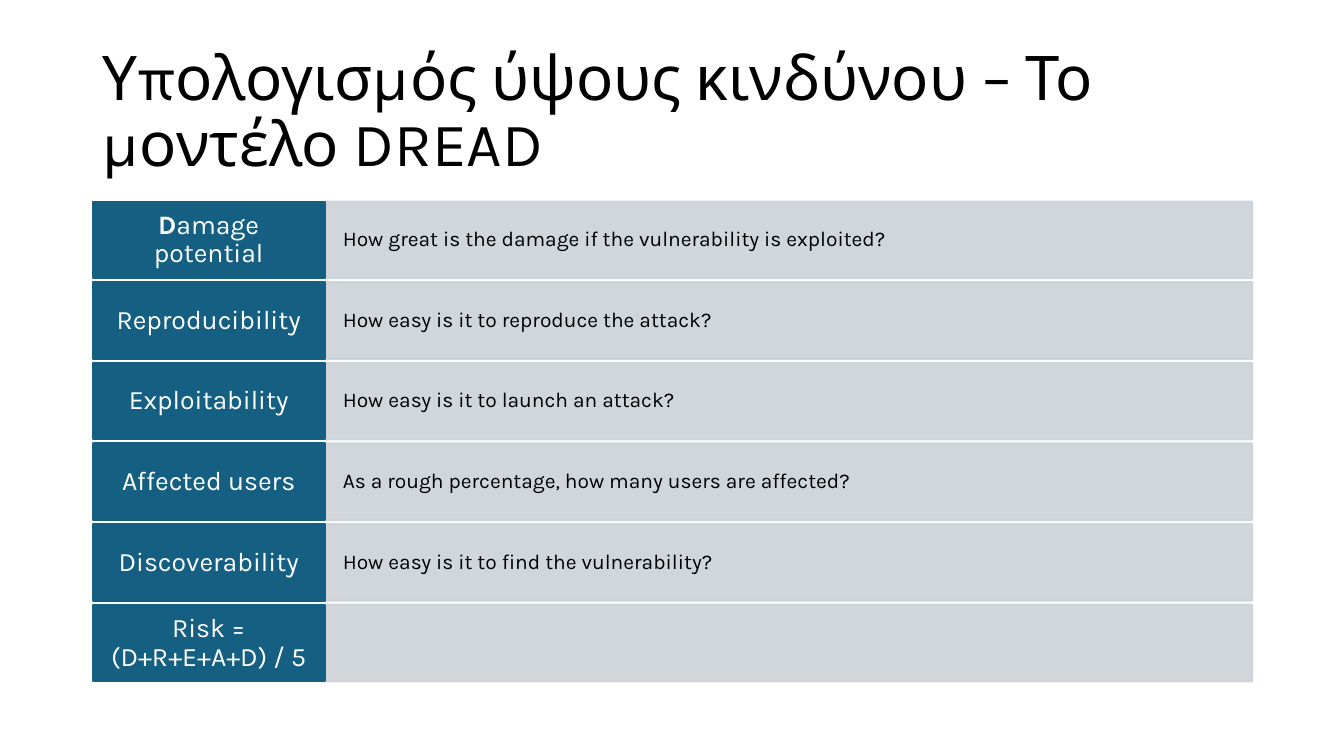
from pptx import Presentation
from pptx.dml.color import RGBColor
from pptx.enum.shapes import MSO_SHAPE as Shape
from pptx.enum.text import MSO_ANCHOR as Anchor, PP_ALIGN as Align
from pptx.oxml.ns import qn
from pptx.util import Emu, Pt
from lxml.etree import SubElement

BLACK = RGBColor(0x00, 0x00, 0x00)
WHITE = RGBColor(0xFF, 0xFF, 0xFF)
TEAL = RGBColor(0x15, 0x60, 0x82)
GREY = RGBColor(0xCC, 0xD2, 0xD8)

# Each criterion: bold initial, rest of the label, question
CRITERIA = [
    ("D", "amage potential", "How great is the damage if the vulnerability is exploited?"),
    ("", "Reproducibility", "How easy is it to reproduce the attack?"),
    ("", "Exploitability", "How easy is it to launch an attack?"),
    ("", "Affected users", "As a rough percentage, how many users are affected?"),
    ("", "Discoverability", "How easy is it to find the vulnerability?"),
    ("", "Risk = (D+R+E+A+D) / 5", ""),
]
LEFT, TOP = 92, 200
LABEL_WIDTH, QUESTION_WIDTH = 230, 920
ROW_HEIGHT, ROW_PITCH = 76, 80


def px(length):
    """One px is a hundredth of an inch."""
    return Emu(length * 9144)


class SlideBuilder:
    font = "Karla"
    line_spacing = 0.9

    def __init__(self, slide):
        self.slide = slide

    def add_text(self, frame, text, size, color, align=Align.LEFT, margins=(10, 5), bold_start=""):
        frame.word_wrap = True
        frame.vertical_anchor = Anchor.MIDDLE
        frame.margin_left = frame.margin_right = px(margins[0])
        frame.margin_top = frame.margin_bottom = px(margins[1])
        paragraph = frame.paragraphs[0]
        paragraph.alignment = align
        paragraph.line_spacing = self.line_spacing
        paragraph.font.name = self.font
        paragraph.font.size = Pt(size)
        paragraph.font.color.rgb = color
        if bold_start:
            initial = paragraph.add_run()
            initial.text = bold_start
            initial.font.bold = True
        paragraph.add_run().text = text

    def title(self, x, y, width, height, text):
        box = self.slide.shapes.add_textbox(px(x), px(y), px(width), px(height))
        self.add_text(box.text_frame, text, 44, BLACK)

    def bar(self, x, y, width, height, color, opacity=100):
        bar = self.slide.shapes.add_shape(Shape.RECTANGLE, px(x), px(y), px(width), px(height))
        bar.shadow.inherit = False
        bar.fill.solid()
        bar.fill.fore_color.rgb = color
        bar.line.color.rgb = color
        bar.line.width = Pt(1.5)
        if opacity < 100:
            for tint in bar.element.spPr.iter(qn("a:srgbClr")):
                SubElement(tint, qn("a:alpha"), val=str(opacity * 1000))
        return bar


def main():
    prs = Presentation()
    prs.slide_width, prs.slide_height = px(1333), px(750)
    builder = SlideBuilder(prs.slides.add_slide(prs.slide_layouts[6]))

    # Title
    builder.title(LEFT, 40, LABEL_WIDTH + QUESTION_WIDTH, 145,
                  "Υπολογισμός ύψους κινδύνου – Το μοντέλο DREAD")

    # DREAD rows: question bar first, label bar over its edge
    for row, (initial, label, question) in enumerate(CRITERIA):
        y = TOP + row * ROW_PITCH
        question_bar = builder.bar(LEFT + LABEL_WIDTH, y, QUESTION_WIDTH, ROW_HEIGHT, GREY, 90)
        if question:
            builder.add_text(question_bar.text_frame, question, 15, BLACK, margins=(18, 19))
        label_bar = builder.bar(LEFT, y, LABEL_WIDTH, ROW_HEIGHT, TEAL)
        builder.add_text(label_bar.text_frame, label, 19, WHITE, Align.CENTER, (12, 7), initial)

    prs.save("out.pptx")


if __name__ == "__main__":
    main()
